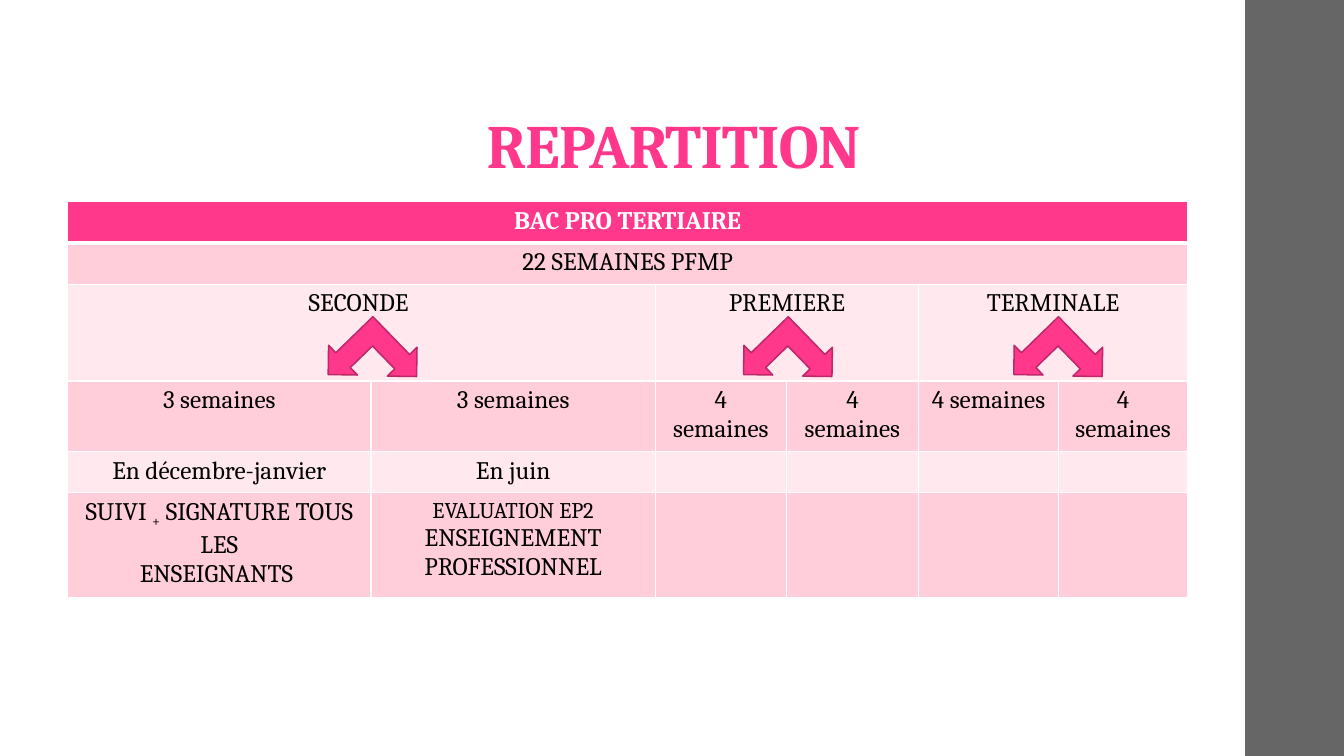
"""Build the REPARTITION slide: the training weeks of a three-year course."""
from lxml.etree import SubElement
from pptx import Presentation
from pptx.dml.color import RGBColor
from pptx.enum.shapes import MSO_SHAPE
from pptx.enum.text import MSO_ANCHOR, PP_ALIGN
from pptx.oxml.ns import qn
from pptx.util import Inches, Pt

COLORS = {"pink": "FF388C", "dark_pink": "BD2968", "rose": "FFCEDA",
          "pale": "FFE8EE", "grey": "666666", "white": "FFFFFF", "black": "000000"}
FONT = "Cambria"
TITLE = "REPARTITION"
COLUMN_WIDTHS = [3.01, 2.82, 1.3, 1.31, 1.39, 1.28]
# Each row: height, fill, columns per cell, cell texts
ROWS = [
    (0.41, "pink", 6, ["BAC PRO TERTIAIRE"]),
    (0.41, "rose", 6, ["22 SEMAINES PFMP"]),
    (0.96, "pale", 2, ["SECONDE ", "PREMIERE", "TERMINALE"]),
    (0.68, "rose", 1, ["3 semaines"] * 2 + ["4 semaines"] * 4),
    (0.41, "pale", 1, ["En décembre-janvier", "En juin"] + [""] * 4),
    (0.99, "rose", 1, ["SUIVI + SIGNATURE TOUS LES\nENSEIGNANTS ",
                       "EVALUATION EP2\nENSEIGNEMENT PROFESSIONNEL"] + [""] * 4),
]
SMALL_TEXT = "EVALUATION EP2"
SUBSCRIPT = "+"
ARROW_LEFTS = [3.28, 7.4, 10.08]


def color(name):
    return RGBColor.from_string(COLORS[name])


def style_run(run, size, color_name, bold=False):
    run.font.name = FONT
    run.font.size = Pt(size)
    run.font.bold = bold
    run.font.color.rgb = color(color_name)


def add_box(slide, preset, left, top, width, height, fill):
    shape = slide.shapes.add_shape(
        preset, Inches(left), Inches(top), Inches(width), Inches(height))
    shape.shadow.inherit = False
    shape.fill.solid()
    shape.fill.fore_color.rgb = color(fill)
    shape.line.fill.background()
    return shape


def add_title(slide):
    title = slide.shapes.add_textbox(Inches(1.38), Inches(0.29), Inches(10.6), Inches(1.56))
    frame = title.text_frame
    frame.word_wrap = True
    frame.vertical_anchor = MSO_ANCHOR.BOTTOM
    frame.margin_top = Inches(0.03)
    frame.text = TITLE
    paragraph = frame.paragraphs[0]
    paragraph.alignment = PP_ALIGN.CENTER
    paragraph.line_spacing = 0.9
    run = paragraph.runs[0]
    style_run(run, 44, "pink", True)
    run.font._element.set("spc", "-50")


def fill_cell(cell, fill, bottom_width):
    properties = cell._tc.get_or_add_tcPr()
    for side, width in (("L", 1), ("R", 1), ("T", 1), ("B", bottom_width)):
        border = SubElement(properties, qn(f"a:ln{side}"), w=str(Pt(width)))
        SubElement(SubElement(border, qn("a:solidFill")), qn("a:srgbClr"), val=COLORS["white"])
    cell.fill.solid()
    cell.fill.fore_color.rgb = color(fill)


def write_cell(cell, text, header):
    cell.text_frame.text = text
    for paragraph in cell.text_frame.paragraphs:
        paragraph.alignment = PP_ALIGN.CENTER
        line = paragraph.text
        before, mark, after = line.partition(SUBSCRIPT)
        if mark:
            paragraph.runs[0].text = before
            for part in (mark, after):
                paragraph.add_run().text = part
        for run in paragraph.runs:
            style_run(run, 16 if line == SMALL_TEXT else 18,
                      "white" if header else "black", header)
            if run.text == SUBSCRIPT:
                run.font._element.set("baseline", "-25000")


def add_schedule(slide):
    heights = [row[0] for row in ROWS]
    frame = slide.shapes.add_table(
        len(ROWS), len(COLUMN_WIDTHS), Inches(0.67), Inches(2),
        Inches(sum(COLUMN_WIDTHS)), Inches(sum(heights)))
    table = frame.table
    for column, width in zip(table.columns, COLUMN_WIDTHS):
        column.width = Inches(width)
    for row_index, (height, fill, span, texts) in enumerate(ROWS):
        header = row_index == 0
        table.rows[row_index].height = Inches(height)
        for cell in table.rows[row_index].cells:
            fill_cell(cell, fill, 3 if header else 1)
        for text_index, text in enumerate(texts):
            first = text_index * span
            cell = table.cell(row_index, first)
            if span > 1:
                cell.merge(table.cell(row_index, first + span - 1))
            write_cell(cell, text, header)


def add_arrows(slide):
    for left in ARROW_LEFTS:
        arrow = add_box(slide, MSO_SHAPE.LEFT_UP_ARROW, left, 3.17, 0.83, 0.82, "pink")
        arrow.rotation = 225.8
        arrow.line.color.rgb = color("dark_pink")
        arrow.line.width = Pt(1.1)


def main():
    presentation = Presentation()
    presentation.slide_width = Inches(13.33)
    presentation.slide_height = Inches(7.5)
    slide = presentation.slides.add_slide(presentation.slide_layouts[6])
    add_box(slide, MSO_SHAPE.RECTANGLE, 12.35, 0, 0.98, 7.5, "grey")
    add_title(slide)
    add_schedule(slide)
    add_arrows(slide)
    presentation.save("out.pptx")


if __name__ == "__main__":
    main()
